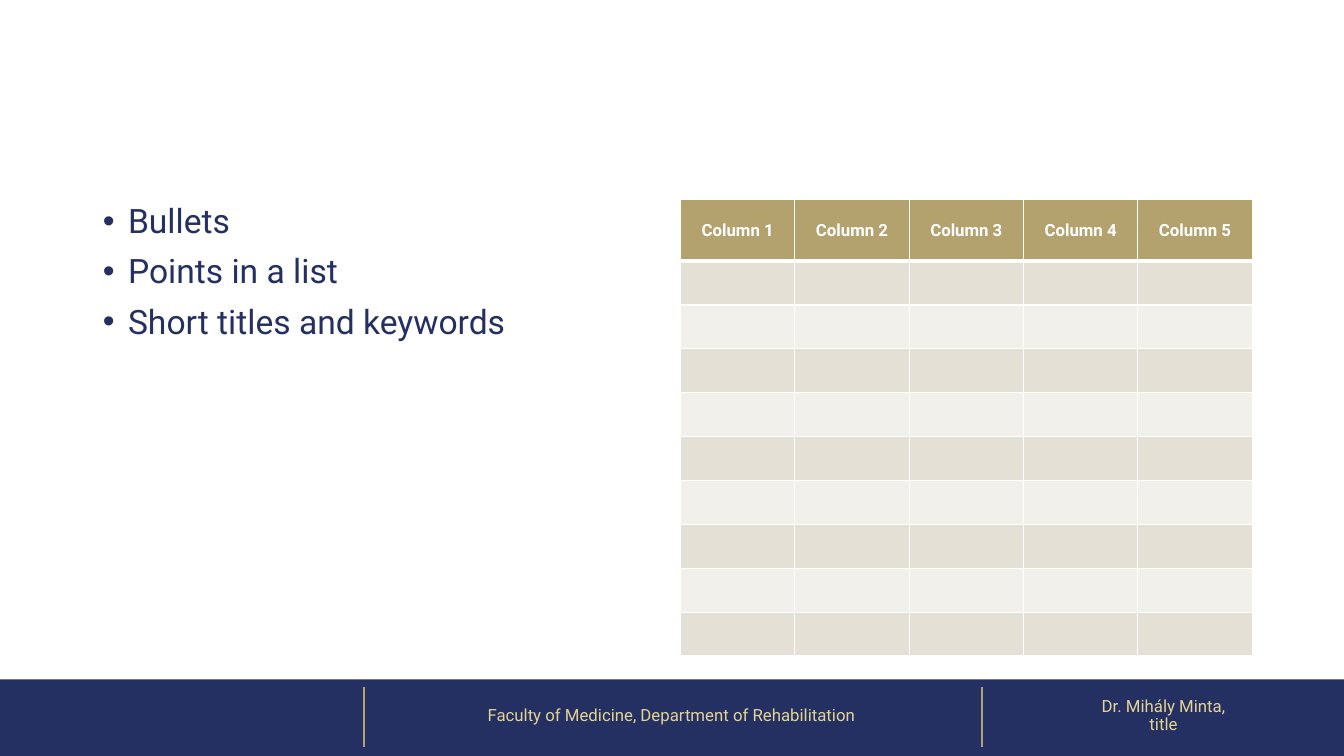
"""Build a slide with a keyword list, an empty five-column table and a footer band."""
from lxml.etree import SubElement
from pptx import Presentation
from pptx.dml.color import RGBColor
from pptx.enum.shapes import MSO_CONNECTOR as Connector, MSO_SHAPE as Shape
from pptx.enum.text import MSO_ANCHOR as Anchor, PP_ALIGN as Align
from pptx.oxml.ns import qn
from pptx.util import Emu, Inches, Pt

KEYWORDS = ["Bullets", "Points in a list", "Short titles and keywords"]
HEADINGS = [f"Column {number}" for number in range(1, 6)]
BODY_ROWS = 9
FOOTERS = [
    ("Faculty of Medicine, Department of Rehabilitation", 3.59, 6.14),
    ("Dr. Mihály Minta,\ntitle", 9.74, 3.6),
]
DIVIDERS = [3.61, 9.74]

NAVY, GOLD, PALE_GOLD, WHITE = "242F62", "B3A16E", "E3D496", "FFFFFF"
BANDS = ["E5E0D5", "F2F0EB"]
FONT = "Roboto"
WIDTH, HEIGHT = 13.33, 7.5
BAND_TOP, BAND_HEIGHT, FOOTER_TOP = 6.74, 0.79, 6.71
CONTENT_TOP, CONTENT_WIDTH, CONTENT_HEIGHT = 1.98, 5.67, 4.53
LIST_LEFT, TABLE_LEFT = 0.92, 6.75
HEADER_HEIGHT = 0.61


def colour(code):
    return RGBColor.from_string(code)


def box(left, top, width, height):
    return [Inches(length) for length in (left, top, width, height)]


def style(paragraph, size, code, bold=False):
    for run in paragraph.runs:
        run.font.name, run.font.size, run.font.bold = FONT, Pt(size), bold
        run.font.color.rgb = colour(code)


def add_keywords(slide):
    body = slide.placeholders[1]
    body.left, body.top, body.width, body.height = box(
        LIST_LEFT, CONTENT_TOP, CONTENT_WIDTH, CONTENT_HEIGHT)
    frame = body.text_frame
    frame.text = "\n".join(KEYWORDS)
    for index, paragraph in enumerate(frame.paragraphs):
        paragraph.line_spacing = 0.9
        paragraph.space_before = Pt(10 if index else 0)
        properties = paragraph._p.get_or_add_pPr()
        properties.set("marL", str(Inches(0.25)))
        properties.set("indent", str(-Inches(0.25)))
        SubElement(properties, qn("a:buFont"), typeface="Arial")
        SubElement(properties, qn("a:buChar"), char="•")
        style(paragraph, 24, NAVY)


def add_borders(cell, top, bottom):
    properties = cell._tc.get_or_add_tcPr()
    for side, points in (("L", 1), ("R", 1), ("T", top), ("B", bottom)):
        edge = SubElement(properties, qn(f"a:ln{side}"), w=str(Pt(points)))
        SubElement(SubElement(edge, qn("a:solidFill")), qn("a:srgbClr"), val=WHITE)


def add_grid(slide):
    grid = slide.shapes.add_table(
        BODY_ROWS + 1, len(HEADINGS),
        *box(TABLE_LEFT, CONTENT_TOP, CONTENT_WIDTH, CONTENT_HEIGHT)).table
    body_height = (CONTENT_HEIGHT - HEADER_HEIGHT) / BODY_ROWS
    for row_index, row in enumerate(grid.rows):
        row.height = Inches(body_height if row_index else HEADER_HEIGHT)
        fill = BANDS[(row_index - 1) % 2] if row_index else GOLD
        for cell in row.cells:
            add_borders(cell, 3 if row_index == 1 else 1, 1 if row_index else 3)
            cell.fill.solid()
            cell.fill.fore_color.rgb = colour(fill)
    for column_index, heading in enumerate(HEADINGS):
        cell = grid.cell(0, column_index)
        cell.vertical_anchor = Anchor.MIDDLE
        cell.text = heading
        paragraph = cell.text_frame.paragraphs[0]
        paragraph.alignment = Align.CENTER
        style(paragraph, 12, WHITE, bold=True)


def add_footer(slide):
    band = slide.shapes.add_shape(Shape.RECTANGLE, *box(0, BAND_TOP, WIDTH, BAND_HEIGHT))
    band.shadow.inherit = False
    band.fill.solid()
    band.fill.fore_color.rgb = colour(NAVY)
    band.line.fill.background()
    for x in DIVIDERS:
        divider = slide.shapes.add_connector(Connector.STRAIGHT, *box(x, 6.82, x, 7.41))
        divider.line.color.rgb = colour(GOLD)
        divider.line.width = Pt(1.5)
        SubElement(divider._element.spPr, qn("a:effectLst"))
    for text, left, width in FOOTERS:
        frame = slide.shapes.add_textbox(
            *box(left, FOOTER_TOP, width, BAND_HEIGHT)).text_frame
        frame.word_wrap = True
        frame.vertical_anchor = Anchor.MIDDLE
        paragraph = frame.paragraphs[0]
        paragraph.text = text
        paragraph.alignment = Align.CENTER
        paragraph.line_spacing = 0.9
        style(paragraph, 12, PALE_GOLD)


def main():
    deck = Presentation()
    deck.slide_width, deck.slide_height = Emu(Inches(WIDTH)), Emu(Inches(HEIGHT))
    slide = deck.slides.add_slide(deck.slide_layouts[1])
    title = slide.shapes.title._element
    title.getparent().remove(title)
    add_footer(slide)
    add_keywords(slide)
    add_grid(slide)
    deck.save("out.pptx")


if __name__ == "__main__":
    main()
